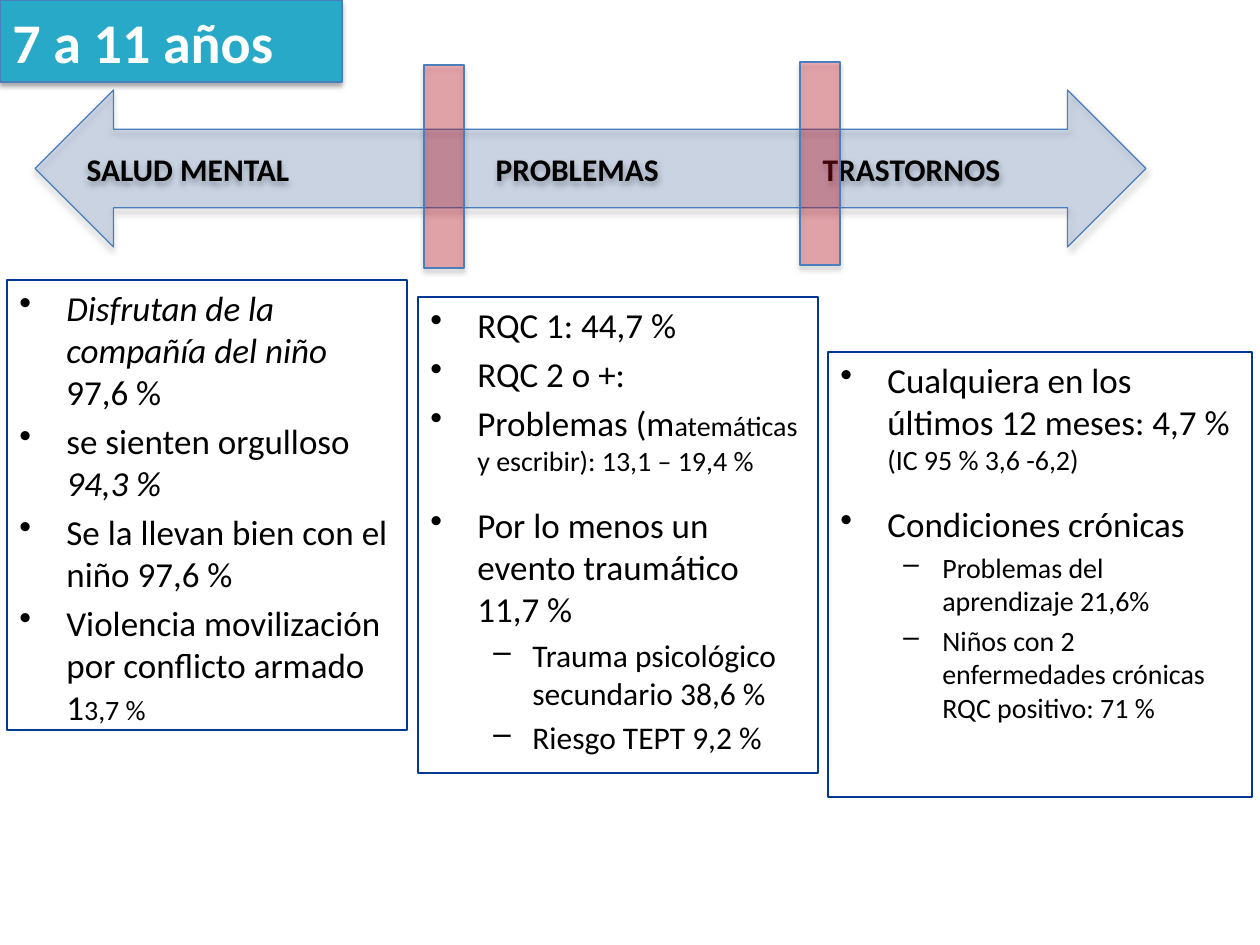
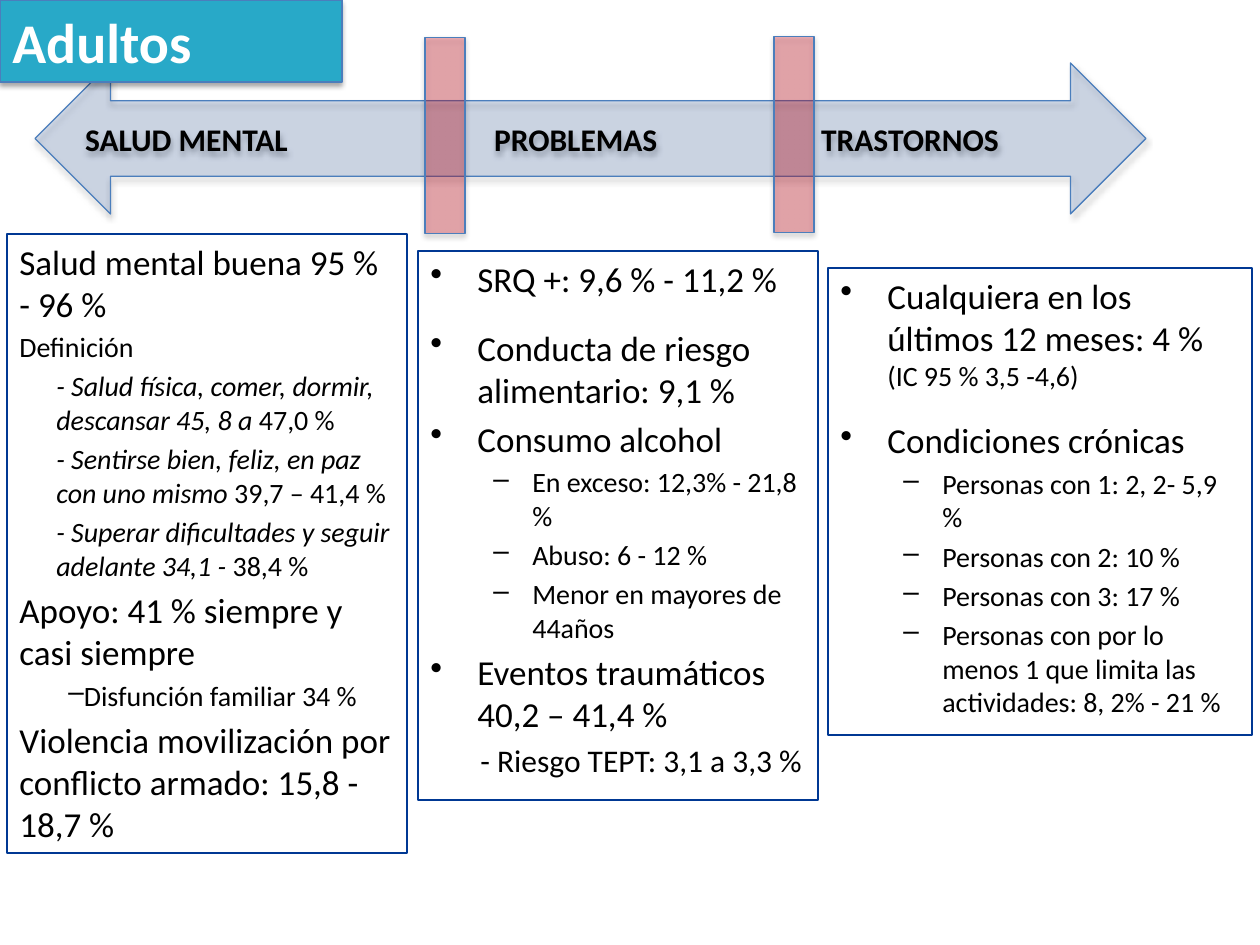
"""Builds two slides that place mental health findings on a continuum, by age group."""
from dataclasses import dataclass

from lxml import etree
from pptx import Presentation
from pptx.dml.color import RGBColor
from pptx.enum.shapes import MSO_SHAPE
from pptx.enum.text import MSO_ANCHOR, PP_ALIGN
from pptx.oxml.ns import qn
from pptx.util import Emu, Pt

RECTANGLE = MSO_SHAPE.RECTANGLE
DOUBLE_ARROW = MSO_SHAPE.LEFT_RIGHT_ARROW
MINUS = MSO_SHAPE.MATH_MINUS
TOP, MIDDLE = MSO_ANCHOR.TOP, MSO_ANCHOR.MIDDLE
LEFT = PP_ALIGN.LEFT

PX_PER_INCH = 126
SLIDE_SIZE = (1260, 945)
TITLE_BAND = (0, 0, 342, 82)
ARROW_LEFT, ARROW_WIDTH = 35, 1111
BAR_HEIGHT = 169
STAGES = ("SALUD MENTAL", "PROBLEMAS", "TRASTORNOS")
STAGE_TABS = (409, 736)
COLUMNS = ((7, 400), (418, 400), (828, 424))


@dataclass(frozen=True)
class Theme:
    font: str = "Calibri"
    ink: str = "000000"
    paper: str = "FFFFFF"
    band: str = "28A9C8"
    navy: str = "003893"
    red: str = "D80F22"
    outline: str = "4B7EBC"
    title: int = 32
    body: int = 20
    stage: int = 18
    detail: int = 16
    line: float = 0.75
    space_ratio: float = 0.2
    group_gap: float = 11.4


@dataclass(frozen=True)
class Level:
    margin: int = 0
    indent: int = 0
    bullet: str = ""


@dataclass(frozen=True)
class Item:
    level: Level
    runs: tuple
    new_group: bool = False


THEME = Theme()
BODY, STAGE, DETAIL = THEME.body, THEME.stage, THEME.detail
PLAIN = Level()
POINT = Level(47, -47, "•")
DASH = Level(102, -39, "–")
TIGHT_DASH = Level(60, -11, "–")
QUOTE = Level(37)
NOTE = Level(50)


def px(length):
    return Emu(round(length * 914400 / PX_PER_INCH))


def item(level, text, size=BODY, new_group=False):
    return Item(level, ((text, size, False),), new_group)


def quote(answer, share):
    return Item(QUOTE, ((answer, DETAIL, True), (share, DETAIL, False)))


def any_disorder(share, interval):
    return Item(POINT, ((f"Cualquiera en los últimos 12 meses: {share} % ", BODY, False),
                        (interval, DETAIL, False)))


class Deck:
    """Holds the theme and the current slide, and draws each kind of element."""

    def __init__(self, theme):
        self.theme = theme
        self.presentation = Presentation()
        self.presentation.slide_width, self.presentation.slide_height = map(px, SLIDE_SIZE)
        self.slide = None

    def add_slide(self):
        self.slide = self.presentation.slides.add_slide(self.presentation.slide_layouts[6])
        background = self.slide.background.fill
        background.solid()
        background.fore_color.rgb = RGBColor.from_string(self.theme.paper)

    def shape(self, preset, box, fill=None, alpha=None, line=None, shadow=True):
        shape = self.slide.shapes.add_shape(preset, *map(px, box))
        shape.shadow.inherit = False
        shape.line.color.rgb = RGBColor.from_string(line or self.theme.outline)
        shape.line.width = Pt(self.theme.line)
        properties = shape.element.spPr
        if fill:
            shape.fill.solid()
            shape.fill.fore_color.rgb = RGBColor.from_string(fill)
        else:
            shape.fill.background()
        if alpha:
            color = properties.find(qn("a:solidFill")).find(qn("a:srgbClr"))
            etree.SubElement(color, qn("a:alpha"), val=str(alpha * 1000))
        if shadow:
            effect = etree.SubElement(
                properties.find(qn("a:effectLst")), qn("a:outerShdw"),
                blurRad=str(Pt(3.1)), dist=str(Pt(1.8)), dir="5400000", rotWithShape="0")
            color = etree.SubElement(effect, qn("a:srgbClr"), val=self.theme.ink)
            etree.SubElement(color, qn("a:alpha"), val="35000")
        return shape

    def style(self, font, size, color, bold=False, italic=False):
        font.name = self.theme.font
        font.size = Pt(size)
        font.bold = bold
        font.italic = italic
        font.color.rgb = RGBColor.from_string(color)

    def label(self, shape, text, size, color, tabs=()):
        frame = shape.text_frame
        frame.word_wrap = True
        frame.vertical_anchor = MIDDLE
        frame.text = text
        paragraph = frame.paragraphs[0]
        paragraph.alignment = LEFT
        if tabs:
            stops = etree.SubElement(paragraph._p.get_or_add_pPr(), qn("a:tabLst"))
            for stop in tabs:
                etree.SubElement(stops, qn("a:tab"), pos=str(px(stop)), algn="l")
        for run in paragraph.runs:
            self.style(run.font, size, color, bold=True)

    def title(self, text):
        band = self.shape(RECTANGLE, TITLE_BAND, self.theme.band)
        self.label(band, text, self.theme.title, self.theme.paper)

    def continuum(self, top, height, bar_length, bars):
        arrow = self.shape(DOUBLE_ARROW, (ARROW_LEFT, top, ARROW_WIDTH, height),
                           self.theme.navy, alpha=16)
        self.label(arrow, "\t".join(STAGES), self.theme.stage, self.theme.ink, STAGE_TABS)
        for left, bar_top in bars:
            bar = self.shape(MINUS, (left, bar_top, bar_length, BAR_HEIGHT),
                             self.theme.red, alpha=31)
            bar.rotation = 270

    def findings(self, column, top, height, items):
        left, width = column
        box = self.shape(RECTANGLE, (left, top, width, height),
                         line=self.theme.navy, shadow=False)
        frame = box.text_frame
        frame.word_wrap = True
        frame.vertical_anchor = TOP
        for index, entry in enumerate(items):
            paragraph = frame.add_paragraph() if index else frame.paragraphs[0]
            self.paragraph(paragraph, entry, first=index == 0)

    def paragraph(self, paragraph, entry, first):
        paragraph.alignment = LEFT
        properties = paragraph._p.get_or_add_pPr()
        properties.set("marL", str(px(entry.level.margin)))
        properties.set("indent", str(px(entry.level.indent)))
        if entry.level.bullet:
            etree.SubElement(properties, qn("a:buChar"), char=entry.level.bullet)
        else:
            etree.SubElement(properties, qn("a:buNone"))
        if not first:
            gap = self.theme.group_gap if entry.new_group else 0
            paragraph.space_before = Pt(entry.runs[0][1] * self.theme.space_ratio + gap)
        for text, size, italic in entry.runs:
            run = paragraph.add_run()
            run.text = text
            self.style(run.font, size, self.theme.ink, italic=italic)


CHILDREN = {
    "title": "7 a 11 años",
    "continuum": (90, 157, 276, ((306, 82), (682, 79))),
    "findings": (
        (280, 450, (
            Item(POINT, (("Disfrutan de la compañía del niño ", BODY, True),
                         ("97,6 %", BODY, False))),
            Item(POINT, (("se sienten orgulloso ", BODY, False), ("94,3 %", BODY, True))),
            item(POINT, "Se la llevan bien con el niño 97,6 %"),
            Item(POINT, (("Violencia movilización por conflicto armado 1", BODY, False),
                         ("3,7 %", DETAIL, False))),
        )),
        (297, 476, (
            item(POINT, "RQC 1: 44,7 %"),
            item(POINT, "RQC 2 o +:"),
            Item(POINT, (("Problemas (m", BODY, False),
                         ("atemáticas y escribir): 13,1 – 19,4 %", DETAIL, False))),
            item(POINT, "Por lo menos un evento traumático 11,7 %", new_group=True),
            item(DASH, "Trauma psicológico secundario 38,6 %", STAGE),
            item(DASH, "Riesgo TEPT 9,2 %", STAGE),
        )),
        (352, 445, (
            any_disorder("4,7", "(IC 95 % 3,6 -6,2)"),
            item(POINT, "Condiciones crónicas", new_group=True),
            item(DASH, "Problemas del aprendizaje 21,6%", DETAIL),
            item(DASH, "Niños con 2 enfermedades crónicas RQC positivo: 71 %", DETAIL),
        )),
    ),
}

ADULTS = {
    "title": "Adultos",
    "continuum": (63, 151, 266, ((312, 51), (661, 50))),
    "findings": (
        (234, 619, (
            item(PLAIN, "Salud mental buena 95 % - 96 %"),
            item(PLAIN, "Definición", DETAIL),
            quote("- Salud física, comer, dormir, descansar 45, 8 a ", "47,0 %"),
            quote("- Sentirse bien, feliz, en paz con uno mismo", " 39,7 – 41,4 %"),
            quote("- Superar dificultades y seguir adelante 34,1 - ", "38,4 %"),
            item(PLAIN, "Apoyo: 41 % siempre y casi siempre"),
            item(TIGHT_DASH, "Disfunción familiar 34 %", DETAIL),
            item(PLAIN, "Violencia movilización por conflicto armado: 15,8 - 18,7 %"),
        )),
        (251, 549, (
            item(POINT, "SRQ +: 9,6 % - 11,2 %"),
            item(POINT, "Conducta de riesgo alimentario: 9,1 %", new_group=True),
            item(POINT, "Consumo alcohol"),
            item(DASH, "En exceso: 12,3% - 21,8 %", DETAIL),
            item(DASH, "Abuso: 6 - 12 %", DETAIL),
            item(DASH, "Menor en mayores de 44años", DETAIL),
            item(POINT, "Eventos traumáticos 40,2 – 41,4 %"),
            item(NOTE, "- Riesgo TEPT: 3,1 a 3,3 %", STAGE),
        )),
        (268, 467, (
            any_disorder("4", "(IC 95 % 3,5 -4,6)"),
            item(POINT, "Condiciones crónicas", new_group=True),
            item(DASH, "Personas con 1: 2, 2- 5,9 %", DETAIL),
            item(DASH, "Personas con 2: 10 %", DETAIL),
            item(DASH, "Personas con 3: 17 %", DETAIL),
            item(DASH, "Personas con por lo menos 1 que limita las actividades: 8, 2% - 21 %",
                 DETAIL),
        )),
    ),
}


def main():
    deck = Deck(THEME)
    for age_group in (CHILDREN, ADULTS):
        deck.add_slide()
        deck.continuum(*age_group["continuum"])
        deck.title(age_group["title"])
        for column, (top, height, items) in zip(COLUMNS, age_group["findings"]):
            deck.findings(column, top, height, items)
    deck.presentation.save("out.pptx")


if __name__ == "__main__":
    main()
